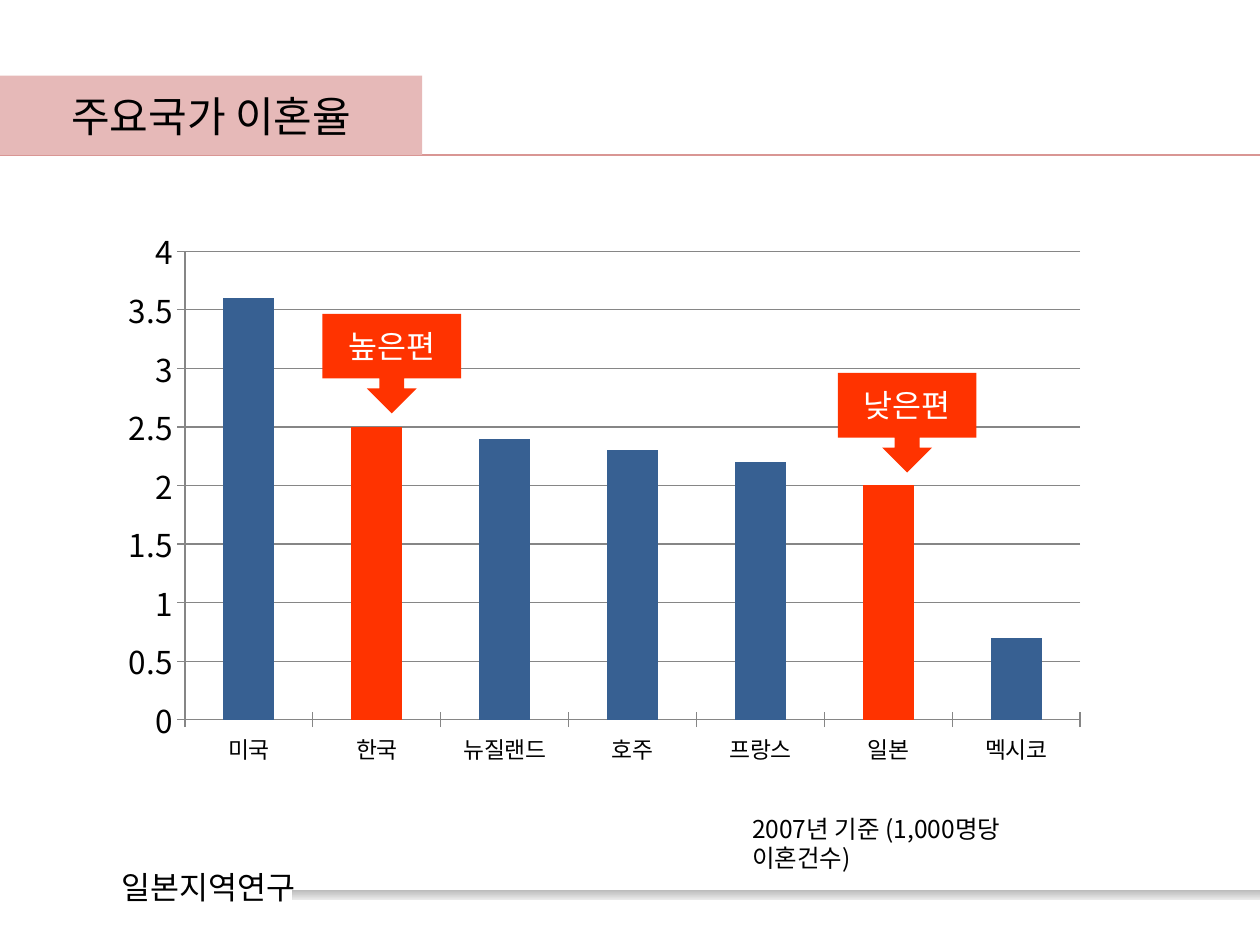
from typing import NamedTuple

from lxml.etree import SubElement, fromstring
from pptx import Presentation
from pptx.chart.data import CategoryChartData
from pptx.dml.color import RGBColor
from pptx.enum.chart import XL_CHART_TYPE, XL_TICK_MARK
from pptx.enum.shapes import MSO_CONNECTOR, MSO_SHAPE
from pptx.enum.text import MSO_ANCHOR, PP_ALIGN
from pptx.oxml.ns import nsdecls, qn
from pptx.util import Inches, Pt

FONT = "Noto Sans CJK KR"
BLACK = RGBColor(0x00, 0x00, 0x00)
WHITE = RGBColor(0xFF, 0xFF, 0xFF)
BLUE = RGBColor(0x37, 0x60, 0x92)
RED = RGBColor(0xFF, 0x33, 0x00)
PINK = RGBColor(0xE6, 0xB9, 0xB8)
ROSE = RGBColor(0xD9, 0x96, 0x94)
GRID = RGBColor(0x86, 0x86, 0x86)
FOOTER_GREYS = (RGBColor(0xB8, 0xB8, 0xB8), RGBColor(0xE9, 0xE9, 0xE9))


class Box(NamedTuple):
    left: float
    top: float
    width: float
    height: float

    def lengths(self) -> list:
        return [Inches(value) for value in self]


class Callout(NamedTuple):
    text: str
    left: float
    top: float


DIVORCE_RATES = {
    "미국": 3.6, "한국": 2.5, "뉴질랜드": 2.4, "호주": 2.3,
    "프랑스": 2.2, "일본": 2, "멕시코": 0.7,
}
HIGHLIGHTED = ("한국", "일본")
CALLOUTS = (Callout("높은편", 2.56, 2.49), Callout("낮은편", 6.65, 2.96))
PLOT_AREA = {"x": 0.063, "y": 0.224, "w": 0.918, "h": 0.675}


def style_font(font, size: float, color: RGBColor) -> None:
    """Set the typeface for Latin and Korean characters alike."""
    font.size = Pt(size)
    font.color.rgb = color
    font.name = FONT
    latin = font._element.find(qn("a:latin"))
    latin.addnext(fromstring(f'<a:ea {nsdecls("a")} typeface="{FONT}"/>'))


def write(shape, text: str, size: float, color: RGBColor = BLACK,
          align: PP_ALIGN = PP_ALIGN.CENTER,
          anchor: MSO_ANCHOR = MSO_ANCHOR.MIDDLE) -> None:
    frame = shape.text_frame
    frame.word_wrap = True
    frame.vertical_anchor = anchor
    paragraph = frame.paragraphs[0]
    paragraph.text = text
    paragraph.alignment = align
    style_font(paragraph.font, size, color)


def add_plain_shape(shapes, preset: MSO_SHAPE, box: Box):
    shape = shapes.add_shape(preset, *box.lengths())
    shape.shadow.inherit = False
    shape.line.fill.background()
    return shape


def fix_plot_area(chart) -> None:
    plot_area = chart._chartSpace.chart.plotArea
    for old in plot_area.findall(qn("c:layout")):
        plot_area.remove(old)
    settings = {"layoutTarget": "inner", "xMode": "edge", "yMode": "edge", **PLOT_AREA}
    layout = fromstring(f'<c:layout {nsdecls("c")}/>')
    manual = SubElement(layout, qn("c:manualLayout"))
    for name, value in settings.items():
        SubElement(manual, qn(f"c:{name}"), val=str(value))
    plot_area.insert(0, layout)


def add_rate_chart(shapes, box: Box) -> None:
    data = CategoryChartData()
    data.categories = list(DIVORCE_RATES)
    data.add_series("Series 1", list(DIVORCE_RATES.values()))
    chart = shapes.add_chart(XL_CHART_TYPE.COLUMN_CLUSTERED, *box.lengths(), data).chart
    chart.has_legend = False
    chart.has_title = False
    style_font(chart.font, 18, BLACK)
    fix_plot_area(chart)

    plot = chart.plots[0]
    plot.gap_width = 150
    plot.vary_by_categories = False
    for index, country in enumerate(DIVORCE_RATES):
        fill = plot.series[0].points[index].format.fill
        fill.solid()
        fill.fore_color.rgb = RED if country in HIGHLIGHTED else BLUE

    rates, countries = chart.value_axis, chart.category_axis
    rates.minimum_scale, rates.maximum_scale, rates.major_unit = 0, 4, 0.5
    rates.has_major_gridlines = True
    for axis in (rates, countries):
        axis.major_tick_mark = XL_TICK_MARK.CROSS
        axis.format.line.color.rgb = GRID
    rates.major_gridlines.format.line.color.rgb = GRID
    style_font(countries.tick_labels.font, 13, BLACK)


def add_footer(shapes) -> None:
    bar = add_plain_shape(shapes, MSO_SHAPE.RECTANGLE, Box(2.32, 7.06, 7.68, 0.08))
    bar.fill.gradient()
    bar.fill.gradient_angle = 270
    for stop, grey, position in zip(bar.fill.gradient_stops, FOOTER_GREYS, (0, 1)):
        stop.color.rgb = grey
        stop.position = position

    course = add_plain_shape(shapes, MSO_SHAPE.ROUNDED_RECTANGLE, Box(0.75, 6.82, 1.81, 0.45))
    course.fill.background()
    write(course, "일본지역연구", 18, anchor=MSO_ANCHOR.TOP)


def add_callout(shapes, callout: Callout) -> None:
    box = Box(callout.left, callout.top, 1.1, 0.79)
    arrow = add_plain_shape(shapes, MSO_SHAPE.DOWN_ARROW_CALLOUT, box)
    arrow.fill.solid()
    arrow.fill.fore_color.rgb = RED
    write(arrow, callout.text, 18, WHITE)


def add_heading(shapes) -> None:
    """Draw the rule and lay the title tab over it."""
    rule = shapes.add_connector(MSO_CONNECTOR.STRAIGHT, 0, Inches(1.23), Inches(10), Inches(1.23))
    rule.line.color.rgb = ROSE
    rule.line.width = Pt(1.5)
    SubElement(rule._element.spPr, qn("a:effectLst"))

    title = shapes.title
    title.left, title.top, title.width, title.height = Box(0, 0.6, 3.35, 0.63).lengths()
    tab = SubElement(title._element.spPr, qn("a:prstGeom"), prst="round1Rect")
    SubElement(tab, qn("a:avLst"))
    title.fill.solid()
    title.fill.fore_color.rgb = PINK
    write(title, "주요국가 이혼율", 24)
    rule._element.addnext(title._element)


def main() -> None:
    deck = Presentation()
    deck.slide_width, deck.slide_height = Inches(10), Inches(7.5)
    shapes = deck.slides.add_slide(deck.slide_layouts[5]).shapes

    add_rate_chart(shapes, Box(0.98, 0.76, 7.74, 5.51))
    add_footer(shapes)
    basis = shapes.add_textbox(*Box(5.87, 6.41, 2.91, 0.34).lengths())
    write(basis, "2007년 기준 (1,000명당 이혼건수)", 14,
          align=PP_ALIGN.LEFT, anchor=MSO_ANCHOR.TOP)
    for callout in CALLOUTS:
        add_callout(shapes, callout)
    add_heading(shapes)
    deck.save("out.pptx")


if __name__ == "__main__":
    main()
